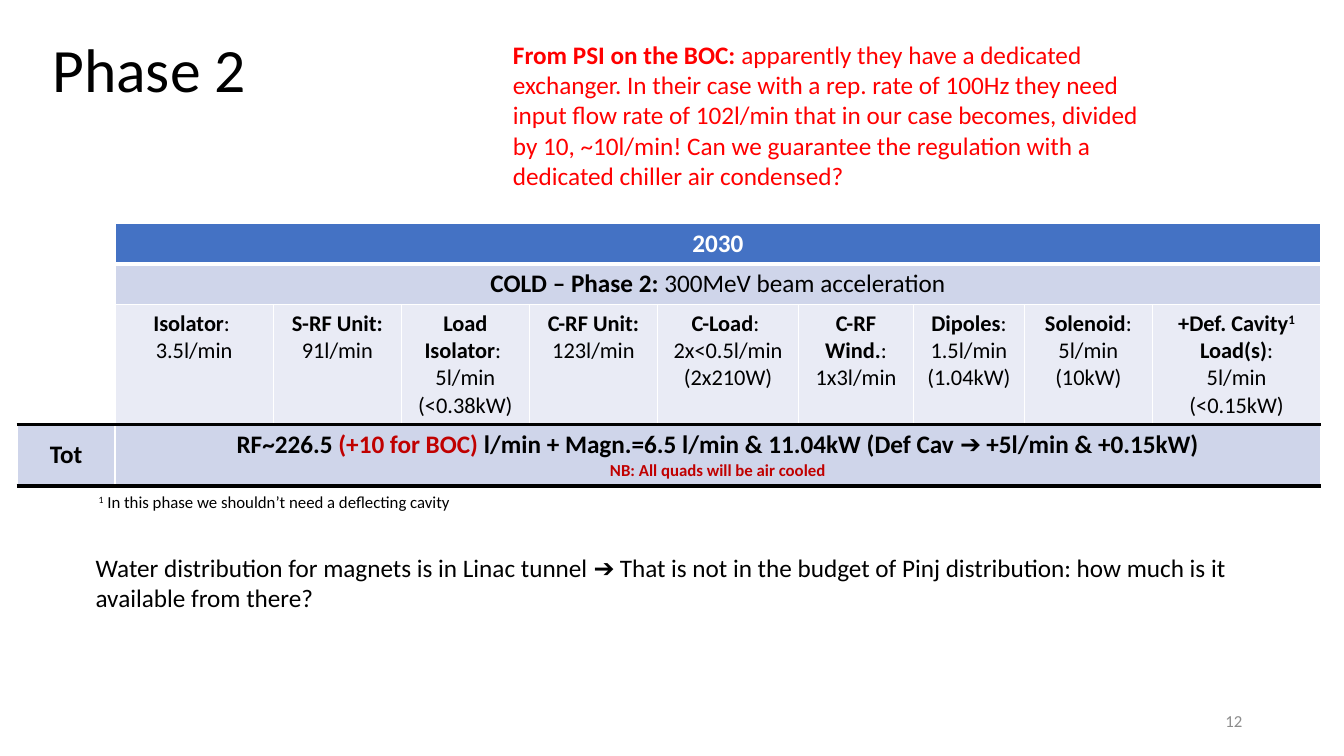
from lxml import etree
from pptx import Presentation
from pptx import util as u
from pptx.dml.color import RGBColor
from pptx.enum import text
from pptx.oxml import ns

BLACK = RGBColor(0x00, 0x00, 0x00)
WHITE = RGBColor(0xFF, 0xFF, 0xFF)
RED = RGBColor(0xFF, 0x00, 0x00)
DARK_RED = RGBColor(0xC0, 0x00, 0x00)
GREY = RGBColor(0x8C, 0x8C, 0x8C)
BLUE = RGBColor(0x44, 0x72, 0xC4)
BAND = RGBColor(0xCF, 0xD5, 0xEA)
PALE = RGBColor(0xE9, 0xEB, 0xF5)

LEFT, CENTER, RIGHT = text.PP_ALIGN.LEFT, text.PP_ALIGN.CENTER, text.PP_ALIGN.RIGHT
TOP, MIDDLE = text.MSO_ANCHOR.TOP, text.MSO_ANCHOR.MIDDLE
BOLD = {"bold": True}
THIN_WHITE, THICK_WHITE, THICK_BLACK = (WHITE, 1), (WHITE, 3), (BLACK, 3)


class Sheet:
    font = "Calibri"

    def __init__(self, deck):
        self.deck = deck
        self.page = deck.slides.add_slide(deck.slide_layouts[6])

    def across(self, percent):
        return round(self.deck.slide_width * percent / 100)

    def down(self, percent):
        return round(self.deck.slide_height * percent / 100)

    def area(self, left, top, width, height):
        return self.across(left), self.down(top), self.across(width), self.down(height)

    def paragraph(self, para, spans, size, color=BLACK, align=LEFT, bold=False):
        para.alignment = align
        para.font.name = self.font
        para.font.size = u.Pt(size)
        para.font.bold = bold
        para.font.color.rgb = color
        for words, style in spans:
            span = para.add_run()
            span.text = words
            if "bold" in style:
                span.font.bold = style["bold"]
            if "color" in style:
                span.font.color.rgb = style["color"]
            if style.get("raised"):
                span._r.get_or_add_rPr().set("baseline", "30000")

    def box(self, place, spans, size, anchor=TOP, spacing=1.0, **style):
        frame = self.page.shapes.add_textbox(*self.area(*place)).text_frame
        frame.word_wrap = True
        frame.vertical_anchor = anchor
        para = frame.paragraphs[0]
        para.line_spacing = spacing
        self.paragraph(para, spans, size, **style)

    def table(self, left, top, columns, rows):
        place = self.area(left, top, sum(columns), sum(rows))
        grid = self.page.shapes.add_table(len(rows), len(columns), *place).table
        grid.first_row = grid.horz_banding = False
        for column, width in zip(grid.columns, columns):
            column.width = self.across(width)
        for row, height in zip(grid.rows, rows):
            row.height = self.down(height)
        return grid

    def cell(self, cell, paragraphs, anchor=TOP):
        cell.vertical_anchor = anchor
        for index, (spans, size, style) in enumerate(paragraphs):
            frame = cell.text_frame
            para = frame.add_paragraph() if index else frame.paragraphs[0]
            self.paragraph(para, spans, size, align=CENTER, **style)

    def paint(self, cell, fill, top, bottom):
        properties = cell._tc.get_or_add_tcPr()
        edges = {"lnL": THIN_WHITE, "lnR": THIN_WHITE, "lnT": top, "lnB": bottom}
        for tag, (color, width) in edges.items():
            line = etree.SubElement(properties, ns.qn(f"a:{tag}"), w=str(u.Pt(width)))
            solid = etree.SubElement(line, ns.qn("a:solidFill"))
            etree.SubElement(solid, ns.qn("a:srgbClr"), val=str(color))
        if fill is None:
            cell.fill.background()
        else:
            cell.fill.solid()
            cell.fill.fore_color.rgb = fill


DEVICES = [
    [[("Isolator", BOLD), (": ", {})], [("3.5l/min", {})]],
    [[("S-RF Unit:", BOLD)], [("91l/min", {})]],
    [[("Load Isolator", BOLD), (": ", {})], [("5l/min (<0.38kW)", {})]],
    [[("C-RF Unit:", BOLD)], [("123l/min", {})]],
    [[("C-Load", BOLD), (": ", {})], [("2x<0.5l/min (2x210W)", {})]],
    [[("C-RF Wind.", BOLD), (":", {})], [("1x3l/min", {})]],
    [[("Dipoles", BOLD), (": 1.5l/min (1.04kW)", {})]],
    [[("Solenoid", BOLD), (": 5l/min (10kW)", {})]],
    [[("+Def. Cavity", BOLD), ("1", {"bold": True, "raised": True}),
      (" Load(s)", BOLD), (":", {})], [("5l/min", {})], [("(<0.15kW)", {})]],
]
TOTAL = [
    ("RF~226.5 ", {}),
    ("(+10 for BOC)", {"color": DARK_RED}),
    (" l/min + Magn.=6.5 l/min & 11.04kW (Def Cav ➔ +5l/min & +0.15kW)", {}),
]
COLUMNS = [7.28, 11.78, 9.53, 9.53, 9.53, 10.5, 8.55, 8.25, 9.53, 12.53]
ROWS = [5.4, 5.4, 15.87, 8.13]
ROW_LOOKS = [
    (BLUE, THIN_WHITE, THICK_WHITE),
    (BAND, THICK_WHITE, THIN_WHITE),
    (PALE, THIN_WHITE, THICK_BLACK),
    (BAND, THICK_BLACK, THICK_BLACK),
]


def flow_table(sheet):
    grid = sheet.table(1.28, 29.5, COLUMNS, ROWS)
    for row, (fill, top, bottom) in enumerate(ROW_LOOKS):
        for column in range(len(COLUMNS)):
            corner = column == 0 and row < 3
            sheet.paint(grid.cell(row, column), None if corner else fill,
                        THIN_WHITE if corner else top, bottom)
    grid.cell(0, 0).merge(grid.cell(2, 0))
    for row in (0, 1, 3):
        grid.cell(row, 1).merge(grid.cell(row, len(COLUMNS) - 1))

    sheet.cell(grid.cell(0, 1), [([("2030", {})], 18, {"color": WHITE, "bold": True})])
    phase = [("COLD – Phase 2: ", BOLD), ("300MeV beam acceleration", {})]
    sheet.cell(grid.cell(1, 1), [(phase, 18, {})])
    for column, lines in enumerate(DEVICES, 1):
        sheet.cell(grid.cell(2, column), [(spans, 16, {}) for spans in lines])
    sheet.cell(grid.cell(3, 0), [([("Tot", {})], 18, BOLD)], MIDDLE)
    remark = [("NB: All quads will be air cooled", {})]
    sheet.cell(grid.cell(3, 1), [
        (TOTAL, 18, BOLD),
        (remark, 12, {"color": DARK_RED, "bold": True}),
    ], MIDDLE)


def main():
    deck = Presentation()
    deck.slide_width, deck.slide_height = u.Inches(13.33), u.Inches(7.5)
    sheet = Sheet(deck)
    sheet.box((3.15, 0, 86.27, 19.33), [("Phase 2", {})], 44, MIDDLE, 0.9)
    flow_table(sheet)
    sheet.box((37.43, 4.53, 50.19, 21.6), [
        ("From PSI on the BOC: ", BOLD),
        ("apparently they have a dedicated exchanger. In their case with a rep. rate "
         "of 100Hz they need input flow rate of 102l/min that in our case becomes, "
         "divided by 10, ~10l/min! Can we guarantee the regulation with a dedicated "
         "chiller air condensed?", {}),
    ], 18, color=RED)
    sheet.box((70.67, 92.67, 22.5, 5.33), [("12", {})], 12, MIDDLE, color=GREY, align=RIGHT)
    sheet.box((6.38, 72.4, 86.72, 9.47), [
        ("Water distribution for magnets is in Linac tunnel ➔ That is not in the budget "
         "of Pinj distribution: how much is it available from there?", {}),
    ], 18)
    sheet.box((6.6, 64.4, 93.4, 4), [
        ("1", {"raised": True}),
        (" In this phase we shouldn’t need a deflecting cavity", {}),
    ], 12)
    deck.save("out.pptx")


if __name__ == "__main__":
    main()
